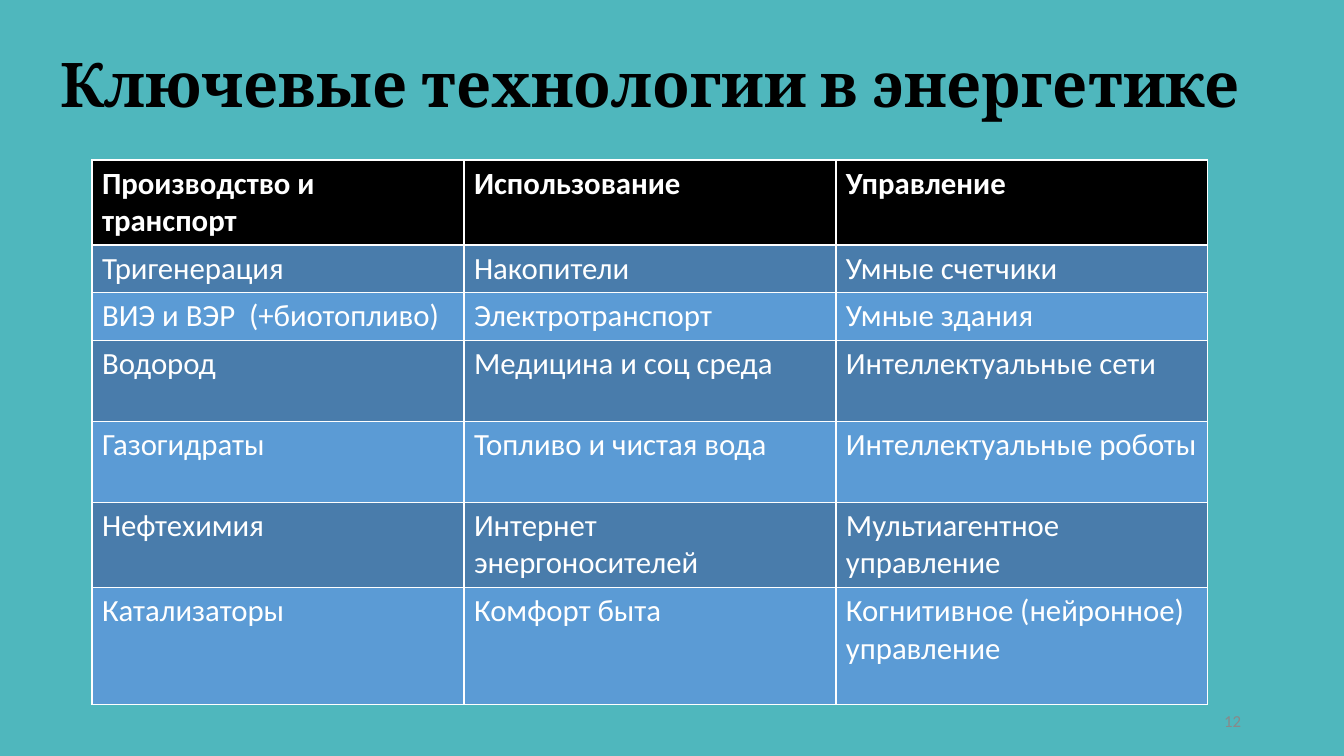
from lxml.etree import SubElement
from pptx import Presentation
from pptx.dml.color import RGBColor
from pptx.enum.text import MSO_ANCHOR, MSO_AUTO_SIZE, PP_ALIGN
from pptx.oxml.ns import qn
from pptx.util import Pt

PX = 914400 / 100.8
COLORS = {"back": "4FB7BD", "title": "000000", "header": "000000", "text": "FFFFFF",
          "odd": "497CAB", "even": "5B9BD5", "number": "898989"}
TITLE = "Ключевые технологии в энергетике"
TECHNOLOGIES = [
    ("Производство и транспорт", "Использование", "Управление"),
    ("Тригенерация", "Накопители", "Умные счетчики"),
    ("ВИЭ и ВЭР  (+биотопливо)", "Электротранспорт", "Умные здания"),
    ("Водород", "Медицина и соц среда", "Интеллектуальные сети"),
    ("Газогидраты", "Топливо и чистая вода", "Интеллектуальные роботы"),
    ("Нефтехимия", "Интернет энергоносителей", "Мультиагентное управление"),
    ("Катализаторы", "Комфорт быта", "Когнитивное (нейронное) управление"),
]
ROW_HEIGHTS = [81, 45, 45, 81, 81, 81, 117]
TITLE_FONT = {"name": "Cambria", "size": Pt(44), "bold": True}
HEADER_FONT = {"name": "Calibri", "size": Pt(22), "bold": True}
BODY_FONT = {**HEADER_FONT, "bold": False}
NUMBER_FONT = {**BODY_FONT, "size": Pt(12)}


def px(length):
    """Turn px into EMU."""
    return round(length * PX)


def apply(target, values):
    """Set each attribute of the target from a dict."""
    for name, value in values.items():
        setattr(target, name, value)


def paint(fill, color):
    """Give a fill one named colour."""
    fill.solid()
    fill.fore_color.rgb = RGBColor.from_string(COLORS[color])


def write(frame, text, font, color, **layout):
    """Write one formatted paragraph into a text frame."""
    para = frame.paragraphs[0]
    apply(para, layout)
    span = para.add_run()
    span.text = text
    apply(span.font, font)
    span.font.color.rgb = RGBColor.from_string(COLORS[color])


def underline_cell(cell, color, width):
    """Draw the bottom border of a table cell."""
    properties = cell._tc.get_or_add_tcPr()
    line = SubElement(properties, qn("a:lnB"), w=str(Pt(width)))
    fill = SubElement(line, qn("a:solidFill"))
    SubElement(fill, qn("a:srgbClr"), val=COLORS[color])


def place_title(page, left, top, width, height):
    """Move and fill the title placeholder."""
    title = page.shapes.title
    apply(title, {"left": px(left), "top": px(top), "width": px(width), "height": px(height)})
    frame = title.text_frame
    apply(frame, {"word_wrap": True, "auto_size": MSO_AUTO_SIZE.NONE,
                  "vertical_anchor": MSO_ANCHOR.MIDDLE})
    write(frame, TITLE, TITLE_FONT, "title", alignment=PP_ALIGN.LEFT, line_spacing=1.5)


def place_table(page, left, top, width):
    """Build the banded table of technologies."""
    count = len(TECHNOLOGIES[0])
    box = page.shapes.add_table(len(TECHNOLOGIES), count, px(left), px(top),
                                px(width), px(sum(ROW_HEIGHTS)))
    table = box.table
    for column in table.columns:
        column.width = px(width / count)
    for index, texts in enumerate(TECHNOLOGIES):
        table.rows[index].height = px(ROW_HEIGHTS[index])
        band = "odd" if index % 2 else "even"
        for cell, text in zip(table.rows[index].cells, texts):
            if index == 0:
                underline_cell(cell, "text", 2)
            paint(cell.fill, band if index else "header")
            write(cell.text_frame, text, BODY_FONT if index else HEADER_FONT, "text")


def place_number(page, left, top, width, height):
    """Write the slide number at the right of its box."""
    box = page.shapes.add_textbox(px(left), px(top), px(width), px(height))
    apply(box.text_frame, {"word_wrap": True, "vertical_anchor": MSO_ANCHOR.MIDDLE})
    write(box.text_frame, "12", NUMBER_FONT, "number", alignment=PP_ALIGN.RIGHT)


def main():
    """Build the deck and save it."""
    deck = Presentation()
    apply(deck, {"slide_width": px(1344), "slide_height": px(756)})
    page = deck.slides.add_slide(deck.slide_layouts[5])
    paint(page.background.fill, "back")
    place_title(page, 50, -9, 1281, 146)
    place_table(page, 92, 160, 1116)
    place_number(page, 949, 701, 302, 40)
    deck.save("out.pptx")


if __name__ == "__main__":
    main()
